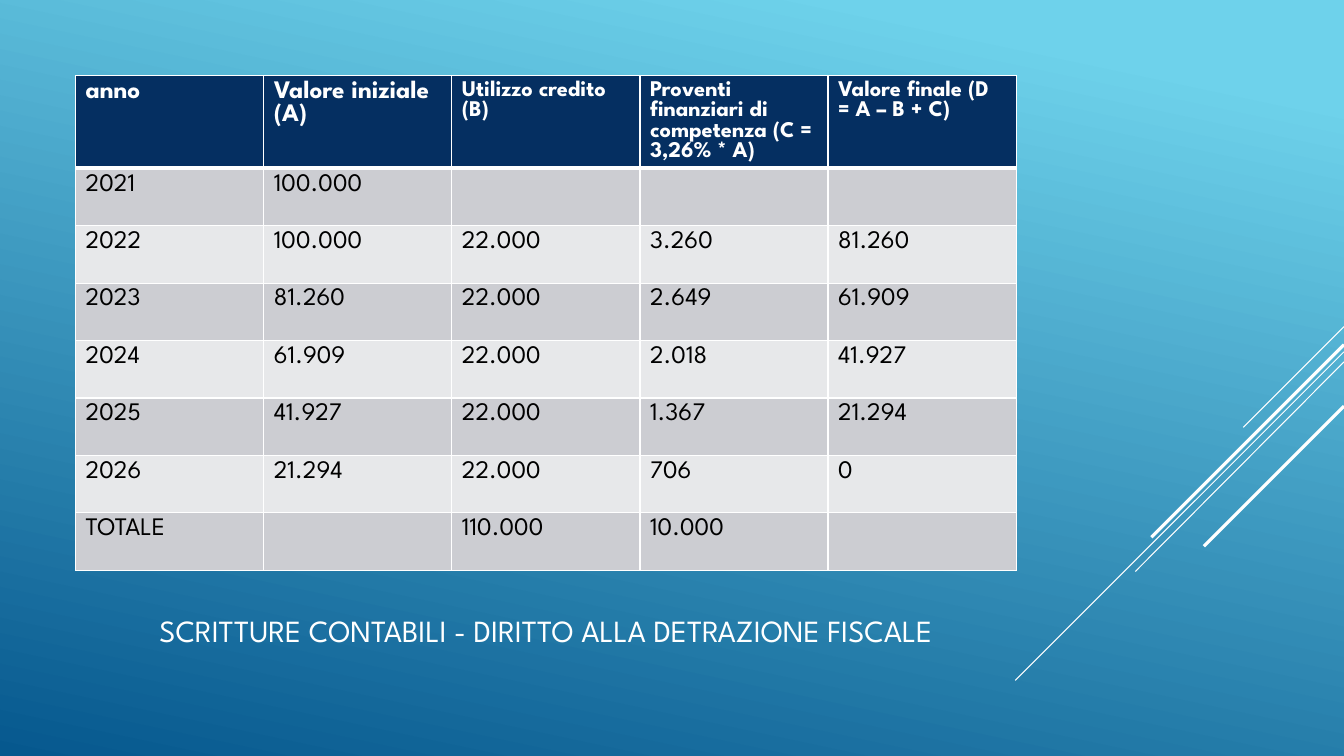
from lxml import etree
from pptx import Presentation
from pptx.dml.color import RGBColor
from pptx.enum.shapes import MSO_CONNECTOR
from pptx.enum.text import MSO_ANCHOR, PP_ALIGN
from pptx.oxml import parse_xml
from pptx.oxml.ns import nsdecls, qn
from pptx.util import Inches, Pt

COLORS = {
    "white": "FFFFFF", "black": "000000", "navy": "052F61",
    "band_dark": "CCCDD2", "band_light": "E7E8EA",
    "sky": "6ED2EB", "deep": "06588E",
}
FONT = "League Spartan"


def rgb(name):
    return RGBColor.from_string(COLORS[name])


def write(frame, text, size=18, color="black", bold=False, align=PP_ALIGN.LEFT):
    paragraph = frame.paragraphs[0]
    paragraph.alignment = align
    run = paragraph.add_run()
    run.text = text
    run.font.name = FONT
    run.font.size = Pt(size)
    run.font.bold = bold
    run.font.color.rgb = rgb(color)


prs = Presentation()
prs.slide_width, prs.slide_height = Inches(13.33), Inches(7.5)
slide = prs.slides.add_slide(prs.slide_layouts[5])

background = slide.background.fill
background.gradient()
background.gradient_angle = 360 - 102
for stop, (position, color) in zip(background.gradient_stops, [(0.1, "sky"), (1, "deep")]):
    stop.position = position
    stop.color.rgb = rgb(color)

# Diagonal rays: start height at the right edge, end point, width
RAYS = [
    (3.24, 12.33, 4.24, 0.75),
    (3.49, 10.07, 6.75, 0.75),
    (3.59, 11.26, 5.67, 0.75),
    (3.42, 11.42, 5.33, 2.25),
    (4.03, 11.94, 5.42, 2.25),
]
for start_y, end_x, end_y, width in RAYS:
    ray = slide.shapes.add_connector(
        MSO_CONNECTOR.STRAIGHT, Inches(13.33), Inches(start_y), Inches(end_x), Inches(end_y))
    ray.line.color.rgb = rgb("white")
    ray.line.width = Pt(width)
    etree.SubElement(ray._element.spPr, qn("a:effectLst"))

title = slide.shapes.title
title.left, title.top = Inches(0.75), Inches(5.94)
title.width, title.height = Inches(9.33), Inches(0.62)
title.text_frame.word_wrap = True
title.text_frame.vertical_anchor = MSO_ANCHOR.MIDDLE
write(title.text_frame, "SCRITTURE CONTABILI - DIRITTO ALLA DETRAZIONE FISCALE",
      size=22, color="white", align=PP_ALIGN.CENTER)

ROWS = [
    ["anno", "Valore iniziale (A)", "Utilizzo credito (B)",
     "Proventi finanziari di competenza (C = 3,26% * A)", "Valore finale (D = A – B + C)"],
    ["2021", "100.000", "", "", ""],
    ["2022", "100.000", "22.000", "3.260", "81.260"],
    ["2023", "81.260", "22.000", "2.649", "61.909"],
    ["2024", "61.909", "22.000", "2.018", "41.927"],
    ["2025", "41.927", "22.000", "1.367", "21.294"],
    ["2026", "21.294", "22.000", "706", "0"],
    ["TOTALE", "", "110.000", "10.000", ""],
]
HEADER_HEIGHT, ROW_HEIGHT = 0.92, 0.57
credit = slide.shapes.add_table(
    len(ROWS), len(ROWS[0]), Inches(0.75), Inches(0.75), Inches(9.33),
    Inches(HEADER_HEIGHT + ROW_HEIGHT * (len(ROWS) - 1))).table

for row, values in enumerate(ROWS):
    header = row == 0
    credit.rows[row].height = Inches(HEADER_HEIGHT if header else ROW_HEIGHT)
    band = "navy" if header else ("band_dark" if row % 2 else "band_light")
    for column, value in enumerate(values):
        cell = credit.cell(row, column)
        cell.fill.solid()
        cell.fill.fore_color.rgb = rgb(band)
        if value:
            write(cell.text_frame, value, size=16 if header and column > 1 else 18,
                  color="white" if header else "black", bold=header)
        thick_sides = {0: ["lnB"], 1: ["lnT"]}.get(row, [])
        for order, side in enumerate(["lnL", "lnR", "lnT", "lnB"]):
            width = Pt(3 if side in thick_sides else 1)
            cell._tc.get_or_add_tcPr().insert(order, parse_xml(
                f'<a:{side} {nsdecls("a")} w="{width}"><a:solidFill>'
                f'<a:srgbClr val="{COLORS["white"]}"/></a:solidFill></a:{side}>'))

prs.save("out.pptx")
